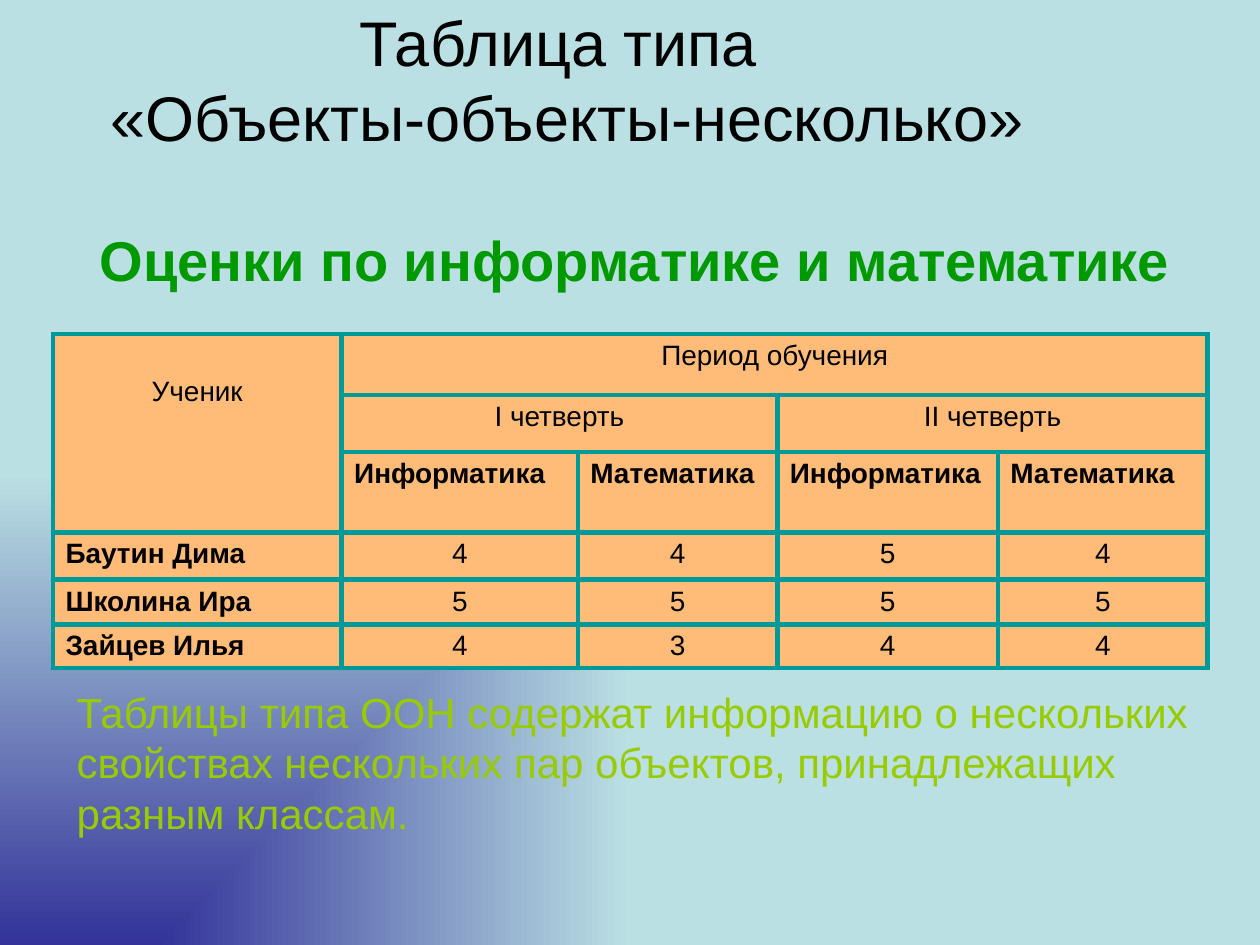
import pptx
import pptx.util
import pptx.dml.color
import pptx.enum.text
import pptx.oxml.ns
import lxml.etree

Pt = pptx.util.Pt
qn = pptx.oxml.ns.qn
ALIGN = pptx.enum.text.PP_ALIGN
ANCHOR = pptx.enum.text.MSO_ANCHOR
FIT = pptx.enum.text.MSO_AUTO_SIZE

COLS = [165, 135, 114, 126, 120]
ROWS = [35, 32.5, 46, 27, 25.5, 24.5]
MARKS = [
    ("Баутин Дима", 4, 4, 5, 4),
    ("Школина Ира", 5, 5, 5, 5),
    ("Зайцев Илья", 4, 3, 4, 4),
]


def tint(code):
    return pptx.dml.color.RGBColor.from_string(code)


def write(frame, text, size=16, color="000000", bold=False, align=ALIGN.LEFT):
    frame.word_wrap = True
    para = frame.paragraphs[0]
    para.text = text
    para.alignment = align
    font = para.font
    font.name = "Arial"
    font.size = Pt(size)
    font.bold = bold
    font.color.rgb = tint(color)


def place(shape, box):
    shape.left, shape.top, shape.width, shape.height = map(Pt, box)


def backdrop(slide):
    fill = slide.background.fill
    fill.gradient()
    for stop, code in zip(fill.gradient_stops, ("333399", "BBE0E3")):
        stop.color.rgb = tint(code)
    line = next(slide.element.iter(qn("a:lin")))
    grad = line.getparent()
    grad.remove(line)
    shade = lxml.etree.SubElement(grad, qn("a:path"), path="rect")
    lxml.etree.SubElement(shade, qn("a:fillToRect"), t="100000", r="100000")


def title(slide, box):
    shape = slide.shapes.title
    place(shape, box)
    frame = shape.text_frame
    frame.auto_size = FIT.NONE
    frame.vertical_anchor = ANCHOR.MIDDLE
    write(frame, "Таблица типа \v«Объекты-объекты-несколько»", size=36,
          align=ALIGN.CENTER)


def note(slide, box, text, **form):
    shape = slide.shapes.add_textbox(*map(Pt, box))
    write(shape.text_frame, text, **form)


def edge(cell, color, width):
    props = cell._tc.get_or_add_tcPr()
    for side in ("a:lnL", "a:lnR", "a:lnT", "a:lnB"):
        line = lxml.etree.SubElement(props, qn(side), w=str(Pt(width)))
        fill = lxml.etree.SubElement(line, qn("a:solidFill"))
        lxml.etree.SubElement(fill, qn("a:srgbClr"), val=color)


def grades(slide, box):
    grid = slide.shapes.add_table(len(ROWS), len(COLS), *map(Pt, box)).table
    grid.first_row = grid.horz_banding = False
    for col, width in zip(grid.columns, COLS):
        col.width = Pt(width)
    for row, height in zip(grid.rows, ROWS):
        row.height = Pt(height)
    for cell in grid.iter_cells():
        edge(cell, "009999", 3)
        cell.fill.solid()
        cell.fill.fore_color.rgb = tint("FFBC79")

    heads = [
        ("Ученик", (0, 0), (2, 0)),
        ("Период обучения", (0, 1), (0, 4)),
        ("I четверть", (1, 1), (1, 2)),
        ("II четверть", (1, 3), (1, 4)),
    ]
    for text, first, last in heads:
        cell = grid.cell(*first)
        cell.merge(grid.cell(*last))
        write(cell.text_frame, text, align=ALIGN.CENTER)
    grid.cell(0, 0).margin_top = Pt(24)

    for c in range(1, 5):
        text = "Информатика" if c % 2 else "Математика"
        write(grid.cell(2, c).text_frame, text, bold=True)
    for r, (name, *marks) in enumerate(MARKS, 3):
        write(grid.cell(r, 0).text_frame, name, bold=True)
        for c, mark in enumerate(marks, 1):
            write(grid.cell(r, c).text_frame, str(mark), align=ALIGN.CENTER)


def main():
    deck = pptx.Presentation()
    deck.slide_width, deck.slide_height = Pt(720), Pt(540)
    slide = deck.slides.add_slide(deck.slide_layouts[5])
    backdrop(slide)
    title(slide, (0, 0, 648, 90))
    grades(slide, (30.25, 190.8, sum(COLS), sum(ROWS)))
    note(slide, (39.6, 125.25, 646.5, 45.4),
         "Оценки по информатике и математике",
         size=32, color="009900", bold=True, align=ALIGN.CENTER)
    note(slide, (36.75, 388.8, 663, 93.6),
         "Таблицы типа ООН содержат информацию о нескольких свойствах "
         "нескольких пар объектов, принадлежащих разным классам.",
         size=24, color="99CC00")
    deck.save("out.pptx")


if __name__ == "__main__":
    main()
